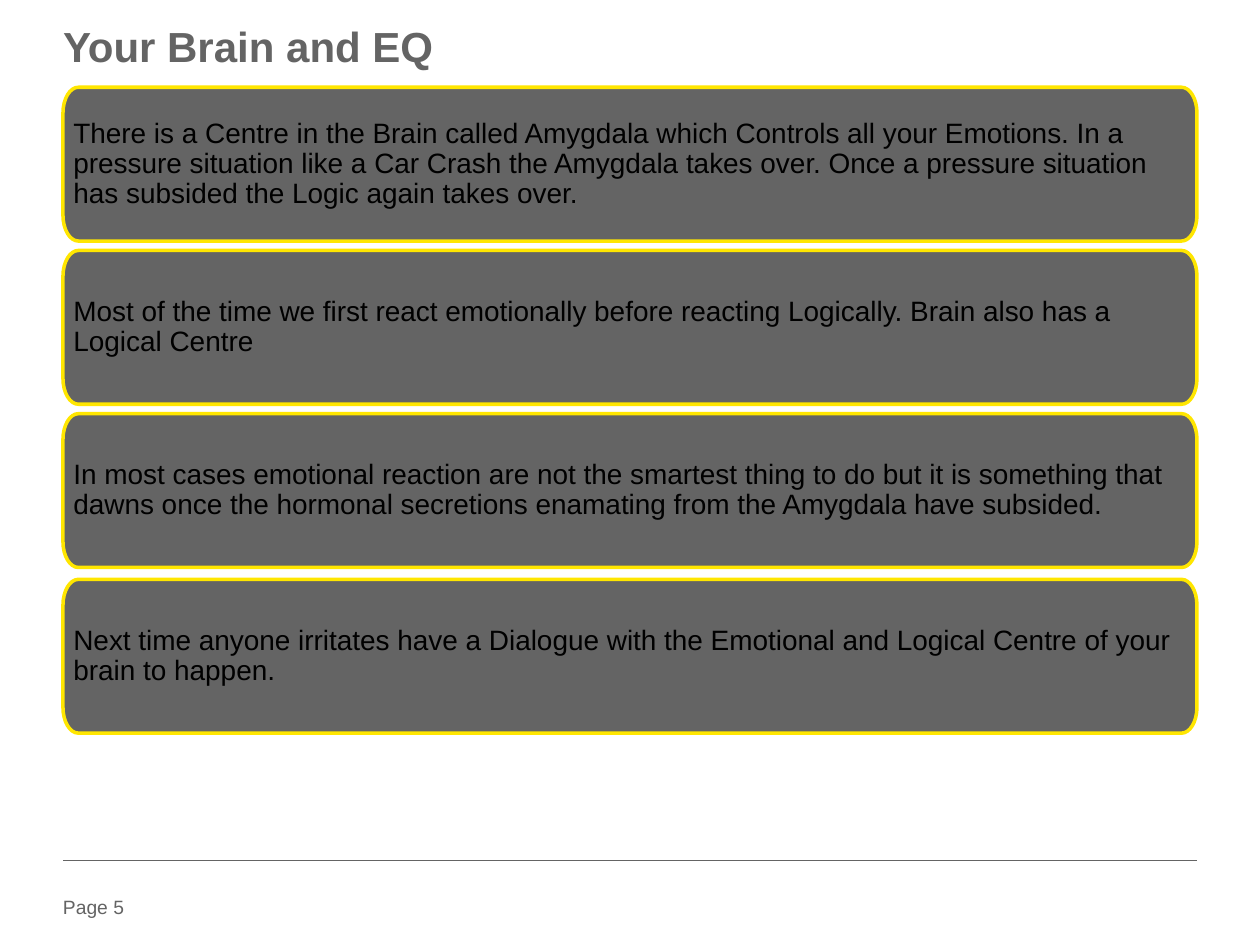
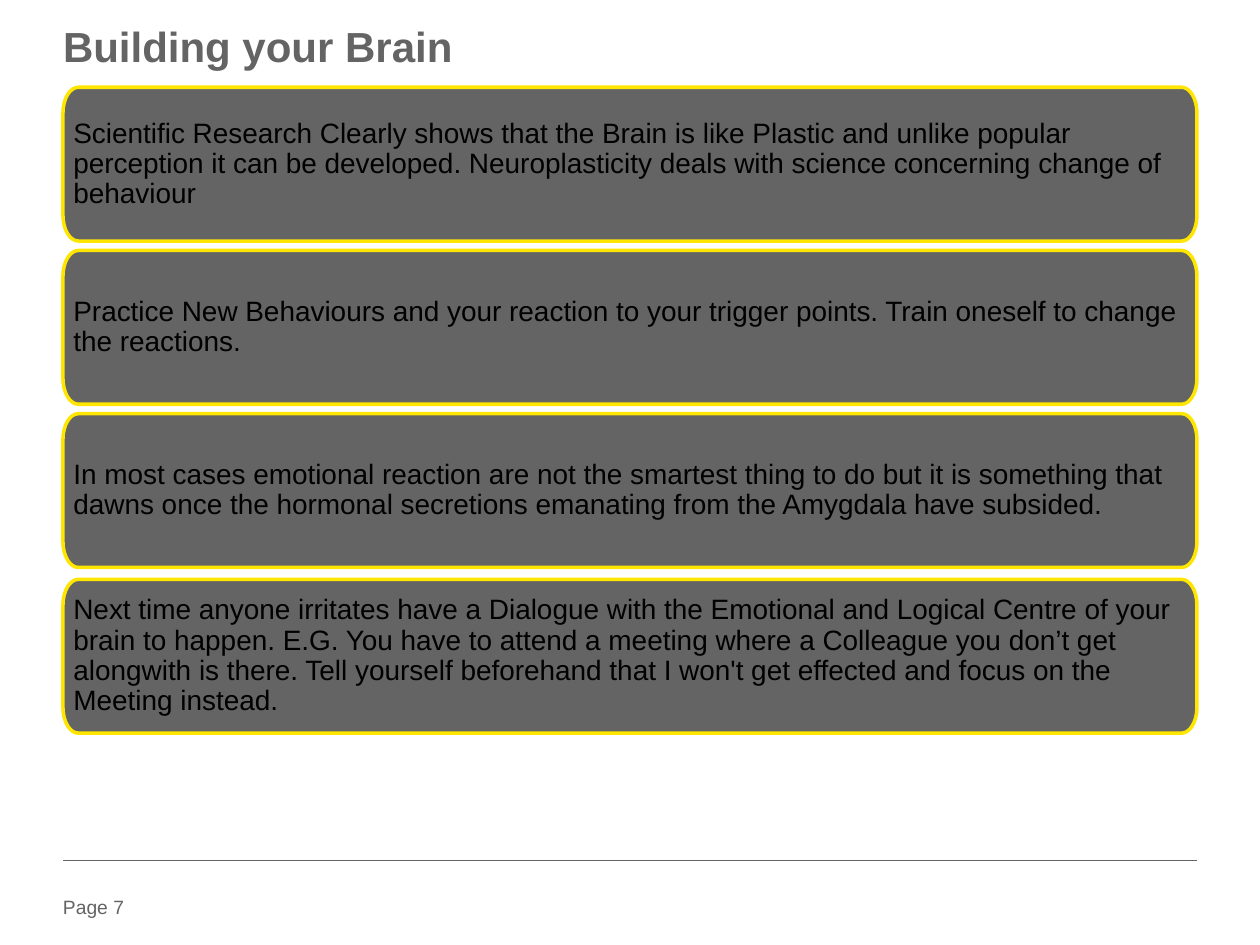
"""Build two slides of stacked statement panels about the brain and EQ."""
import dataclasses

import lxml.etree
import pptx
import pptx.dml.color
import pptx.enum.shapes
import pptx.enum.text
import pptx.oxml.ns
import pptx.util

Cm = pptx.util.Cm
Pt = pptx.util.Pt
Anchor = pptx.enum.text.MSO_ANCHOR
qn = pptx.oxml.ns.qn

COLOURS = {"grey": "646464", "yellow": "FFE600", "black": "000000"}
FONT = "Arial"
LEFT, WIDTH = Cm(1.27), Cm(22.86)
PANEL_TOPS = (Cm(1.76), Cm(5.05), Cm(8.34), Cm(11.68))
PANEL_HEIGHT = Cm(3.1)
CORNER_WIDTH, CORNER_HEIGHT = Cm(0.31), Cm(0.52)
CURVE_PULL = 0.55


@dataclasses.dataclass(frozen=True)
class TextStyle:
    size: int
    colour: str
    bold: bool = False
    line_spacing: float | None = None
    inset: float = 0
    anchor: Anchor = Anchor.TOP


@dataclasses.dataclass(frozen=True)
class Rule:
    top: float
    colour: str
    weight: float


@dataclasses.dataclass(frozen=True)
class Topic:
    title: str
    number: int
    statements: tuple[str, ...]


TITLE = TextStyle(24, "grey", bold=True, line_spacing=0.85)
STATEMENT = TextStyle(16, "black", line_spacing=0.9, inset=0.21, anchor=Anchor.MIDDLE)
FOOTER = TextStyle(11, "grey")
RULES = (Rule(2.9, "yellow", 1.5), Rule(17.34, "grey", 0.25))

TOPICS = (
    Topic("Your Brain and EQ", 5, (
        "There is a Centre in the Brain called Amygdala which Controls all your Emotions. "
        "In a pressure situation like a Car Crash the Amygdala takes over. "
        "Once a pressure situation has subsided the Logic again takes over.",
        "Most of the time we first react emotionally before reacting Logically. "
        "Brain also has a Logical Centre",
        "In most cases emotional reaction are not the smartest thing to do but it is something "
        "that dawns once the hormonal secretions enamating from the Amygdala have subsided.",
        "Next time anyone irritates have a Dialogue with the Emotional and Logical Centre "
        "of your brain to happen.",
    )),
    Topic("Building your Brain", 7, (
        "Scientific Research Clearly shows that the Brain is like Plastic and unlike popular "
        "perception it can be developed. Neuroplasticity deals with science concerning "
        "change of behaviour",
        "Practice New Behaviours and your reaction to your trigger points. "
        "Train oneself to change the reactions.",
        "In most cases emotional reaction are not the smartest thing to do but it is something "
        "that dawns once the hormonal secretions emanating from the Amygdala have subsided.",
        "Next time anyone irritates have a Dialogue with the Emotional and Logical Centre "
        "of your brain to happen. E.G. You have to attend a meeting where a Colleague you "
        "don’t get alongwith is there. Tell yourself beforehand that I won't get effected "
        "and focus on the Meeting instead.",
    )),
)


def colour(name: str) -> pptx.dml.color.RGBColor:
    return pptx.dml.color.RGBColor.from_string(COLOURS[name])


def write(box, text: str, style: TextStyle) -> None:
    frame = box.text_frame
    frame.word_wrap = True
    frame.auto_size = pptx.enum.text.MSO_AUTO_SIZE.NONE
    frame.vertical_anchor = style.anchor
    frame.margin_left = frame.margin_right = Cm(style.inset)
    frame.margin_top = frame.margin_bottom = Cm(style.inset)
    para = frame.paragraphs[0]
    para.alignment = pptx.enum.text.PP_ALIGN.LEFT
    para.line_spacing = style.line_spacing
    span = para.add_run()
    span.text = text
    span.font.name = FONT
    span.font.size = Pt(style.size)
    span.font.bold = style.bold
    span.font.color.rgb = colour(style.colour)


def panel_corners(top: int) -> list[tuple[int, int]]:
    right, bottom = LEFT + WIDTH, top + PANEL_HEIGHT
    inner_left, inner_right = LEFT + CORNER_WIDTH, right - CORNER_WIDTH
    inner_top, inner_bottom = top + CORNER_HEIGHT, bottom - CORNER_HEIGHT
    return [
        (LEFT, inner_top), (inner_left, top),
        (inner_right, top), (right, inner_top),
        (right, inner_bottom), (inner_right, bottom),
        (inner_left, bottom), (LEFT, inner_bottom),
        (LEFT, inner_top),
    ]


def pull(start: int, end: int) -> int:
    return round(start + (end - start) * CURVE_PULL)


def round_corners(panel) -> None:
    segments = list(panel.element.iter(qn("a:moveTo"), qn("a:lnTo")))
    ends = [(int(point.get("x")), int(point.get("y")))
            for segment in segments for point in segment]
    for index in range(1, len(segments), 2):
        start, end = ends[index - 1], ends[index]
        starts_upright = index % 4 == 1
        tip = (start[0], end[1]) if starts_upright else (end[0], start[1])
        curve = lxml.etree.Element(qn("a:cubicBezTo"))
        handles = [tuple(map(pull, anchor, tip)) for anchor in (start, end)]
        for x, y in (*handles, end):
            lxml.etree.SubElement(curve, qn("a:pt"), x=str(x), y=str(y))
        segments[index].getparent().replace(segments[index], curve)


def add_panel(page, top: int, statement: str) -> None:
    start, *others = panel_corners(top)
    builder = page.shapes.build_freeform(*start)
    builder.add_line_segments(others, close=True)
    panel = builder.convert_to_shape()
    round_corners(panel)
    panel.shadow.inherit = False
    panel.fill.solid()
    panel.fill.fore_color.rgb = colour("grey")
    panel.line.color.rgb = colour("yellow")
    panel.line.width = Pt(2)
    write(panel, statement, STATEMENT)


def add_rule(page, rule: Rule) -> None:
    line = page.shapes.add_connector(
        pptx.enum.shapes.MSO_CONNECTOR.STRAIGHT,
        LEFT, Cm(rule.top), LEFT + WIDTH, Cm(rule.top))
    line.line.color.rgb = colour(rule.colour)
    line.line.width = Pt(rule.weight)
    lxml.etree.SubElement(line.element.spPr, qn("a:effectLst"))


def add_topic(deck, topic: Topic) -> None:
    page = deck.slides.add_slide(deck.slide_layouts.get_by_name("Title Only"))
    title = page.shapes.title
    title.left, title.top, title.width, title.height = LEFT, Cm(0.56), WIDTH, Cm(0.94)
    write(title, topic.title, TITLE)
    footer = page.shapes.add_textbox(LEFT, Cm(18.04), Cm(2.01), Cm(0.56))
    write(footer, f"Page {topic.number}", FOOTER)
    for rule in RULES:
        add_rule(page, rule)
    for top, statement in zip(PANEL_TOPS, topic.statements):
        add_panel(page, top, statement)


def main() -> None:
    deck = pptx.Presentation()
    deck.slide_width, deck.slide_height = Cm(25.4), Cm(19.05)
    for topic in TOPICS:
        add_topic(deck, topic)
    deck.save("out.pptx")


if __name__ == "__main__":
    main()
